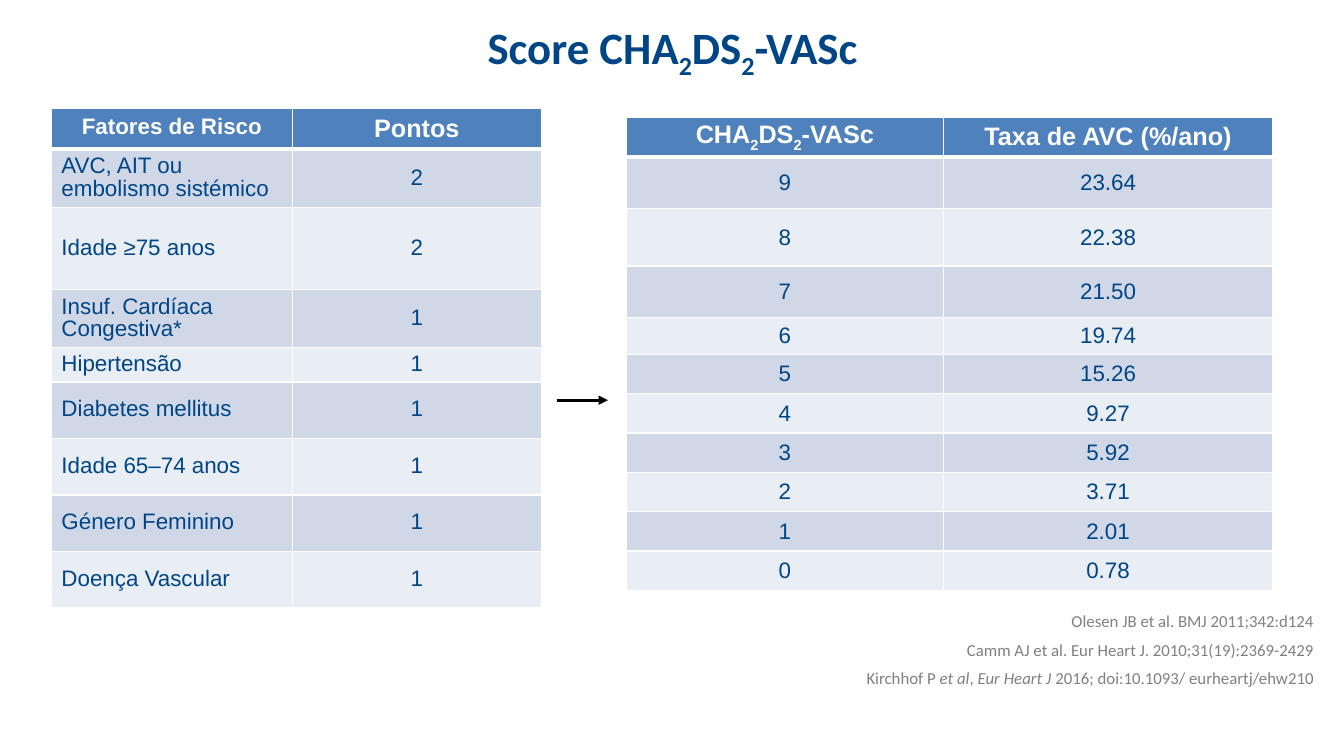
"""Builds the CHA2DS2-VASc score slide with its two linked tables."""
import pptx
import pptx.util
import pptx.dml.color
import pptx.enum.shapes
import pptx.enum.text
from lxml import etree
from pptx.oxml.ns import qn

Inches, Pt = pptx.util.Inches, pptx.util.Pt
RGBColor = pptx.dml.color.RGBColor
ALIGN, ANCHOR = pptx.enum.text.PP_ALIGN, pptx.enum.text.MSO_ANCHOR

NAVY = RGBColor(0x00, 0x45, 0x86)
GRAY = RGBColor(0x80, 0x80, 0x80)
WHITE = RGBColor(0xFF, 0xFF, 0xFF)
BLACK = RGBColor(0x00, 0x00, 0x00)
HEADER_BLUE = RGBColor(0x4F, 0x81, 0xBD)
BANDS = [RGBColor(0xE9, 0xED, 0xF4), RGBColor(0xD0, 0xD8, 0xE8)]

SCORE = [("CHA", ""), ("2", "sub"), ("DS", ""), ("2", "sub"), ("-VASc", "")]
TITLE = [("Score ", "")] + SCORE
CITATIONS = [
    [("Olesen JB et al. BMJ 2011;342:d124", "")],
    [("Camm AJ et al. Eur Heart J.\u00a02010;31(19):2369-2429".replace("\u00a0", " "), "")],
    [("Kirchhof P ", ""), ("et al", "italic"), (", ", ""), ("Eur Heart J ", "italic"),
     ("2016; doi:10.1093/ eurheartj/ehw210", "")],
]
RISK_TABLE = {
    "place": (0.51, 1.08),
    "widths": [2.39, 2.47],
    "heights": [0.4, 0.58, 0.81, 0.58, 0.34] + [0.56] * 4,
    "rows": [
        ("Fatores de Risco", "Pontos"),
        ("AVC, AIT ou embolismo sistémico", "2"),
        ("Idade ≥75 anos", "2"),
        ("Insuf. Cardíaca Congestiva*", "1"),
        ("Hipertensão", "1"),
        ("Diabetes mellitus", "1"),
        ("Idade 65–74 anos", "1"),
        ("Género Feminino", "1"),
        ("Doença Vascular", "1"),
    ],
    "header_sizes": [16, 18],
    "header_anchors": [ANCHOR.TOP, ANCHOR.MIDDLE],
    "header_insets": [(0.08, 0.05), (0.1, 0.05)],
    "insets": [(0.1, 0.05), (0.1, 0.05)],
    "aligns": [ALIGN.LEFT, ALIGN.CENTER],
    "spacing": 0.9,
}
RATES = ["23.64", "22.38", "21.50", "19.74", "15.26", "9.27", "5.92", "3.71", "2.01", "0.78"]
RATE_TABLE = {
    "place": (6.21, 1.16),
    "widths": [3.15, 3.26],
    "heights": [0.4, 0.51, 0.57, 0.51, 0.36] + [0.39] * 6,
    "rows": [(SCORE, "Taxa de AVC (%/ano)")]
            + [(str(9 - place), rate) for place, rate in enumerate(RATES)],
    "header_sizes": [18, 18],
    "header_anchors": [ANCHOR.MIDDLE, ANCHOR.MIDDLE],
    "header_insets": [(0.1, 0), (0.1, 0.05)],
    "insets": [(0.1, 0.05), (0.01, 0)],
    "aligns": [ALIGN.CENTER, ALIGN.CENTER],
    "spacing": 1.0,
}


def write(para, content, name, size, color, bold, align):
    """Fills a paragraph with text or styled pieces."""
    pieces = [(content, "")] if isinstance(content, str) else content
    para.alignment = align
    font = para.font
    font.name, font.size, font.bold = name, Pt(size), bold
    font.color.rgb = color
    for text, style in pieces:
        span = para.add_run()
        span.text = text
        if style == "sub":
            span._r.get_or_add_rPr().set("baseline", "-25000")
        elif style == "italic":
            span.font.italic = True


def add_borders(cell, is_header):
    """Draws white cell borders, heavier under the header."""
    widths = {"lnL": 1, "lnR": 1}
    if is_header:
        widths["lnT"] = 1
    widths["lnB"] = 3 if is_header else 1
    properties = cell._tc.get_or_add_tcPr()
    for tag, width in widths.items():
        line = etree.SubElement(properties, qn("a:" + tag), w=str(Pt(width)))
        fill = etree.SubElement(line, qn("a:solidFill"))
        etree.SubElement(fill, qn("a:srgbClr"), val=str(WHITE))


def add_score_table(page, data):
    """Adds one banded table with a blue header row."""
    rows, widths, heights = data["rows"], data["widths"], data["heights"]
    left, top = data["place"]
    table = page.shapes.add_table(len(rows), len(widths), Inches(left), Inches(top),
                                  Inches(sum(widths)), Inches(sum(heights))).table
    for column, width in zip(table.columns, widths):
        column.width = Inches(width)
    for r, (contents, height) in enumerate(zip(rows, heights)):
        table.rows[r].height = Inches(height)
        is_header = r == 0
        for c, content in enumerate(contents):
            cell = table.cell(r, c)
            side, edge = data["header_insets" if is_header else "insets"][c]
            cell.margin_left = cell.margin_right = Inches(side)
            cell.margin_top = cell.margin_bottom = Inches(edge)
            cell.vertical_anchor = data["header_anchors"][c] if is_header else ANCHOR.MIDDLE
            add_borders(cell, is_header)
            cell.fill.solid()
            cell.fill.fore_color.rgb = HEADER_BLUE if is_header else BANDS[r % 2]
            para = cell.text_frame.paragraphs[0]
            if is_header:
                write(para, content, "Arial", data["header_sizes"][c], WHITE, True, ALIGN.CENTER)
            else:
                para.line_spacing = data["spacing"]
                write(para, content, "Arial", 16, NAVY, False, data["aligns"][c])


def add_arrow(page):
    """Adds the arrow leading from the risk table to the rate table."""
    arrow = page.shapes.add_connector(pptx.enum.shapes.MSO_CONNECTOR.STRAIGHT,
                                      Inches(5.52), Inches(3.97), Inches(6.03), Inches(3.97))
    arrow.line.color.rgb = BLACK
    arrow.line.width = Pt(2.25)
    etree.SubElement(arrow.line._get_or_add_ln(), qn("a:tailEnd"), type="triangle")
    etree.SubElement(arrow._element.spPr, qn("a:effectLst"))


def main():
    """Assembles and saves the deck."""
    deck = pptx.Presentation()
    deck.slide_width, deck.slide_height = Inches(13.33), Inches(7.5)
    page = deck.slides.add_slide(deck.slide_layouts[5])

    title = page.shapes.title
    title.left, title.top, title.width, title.height = map(Inches, (0.67, 0.17, 12, 0.66))
    title.text_frame.vertical_anchor = ANCHOR.MIDDLE
    write(title.text_frame.paragraphs[0], TITLE, "Calibri", 32, NAVY, True, ALIGN.CENTER)

    add_arrow(page)

    box = page.shapes.add_textbox(*map(Inches, (1.94, 6.01, 11.19, 0.91)))
    box.text_frame.word_wrap = True
    for number, citation in enumerate(CITATIONS):
        para = box.text_frame.add_paragraph() if number else box.text_frame.paragraphs[0]
        if number:
            para.space_before = Pt(6)
        write(para, citation, "Calibri", 12, GRAY, False, ALIGN.RIGHT)

    for data in (RISK_TABLE, RATE_TABLE):
        add_score_table(page, data)
    deck.save("out.pptx")


if __name__ == "__main__":
    main()
